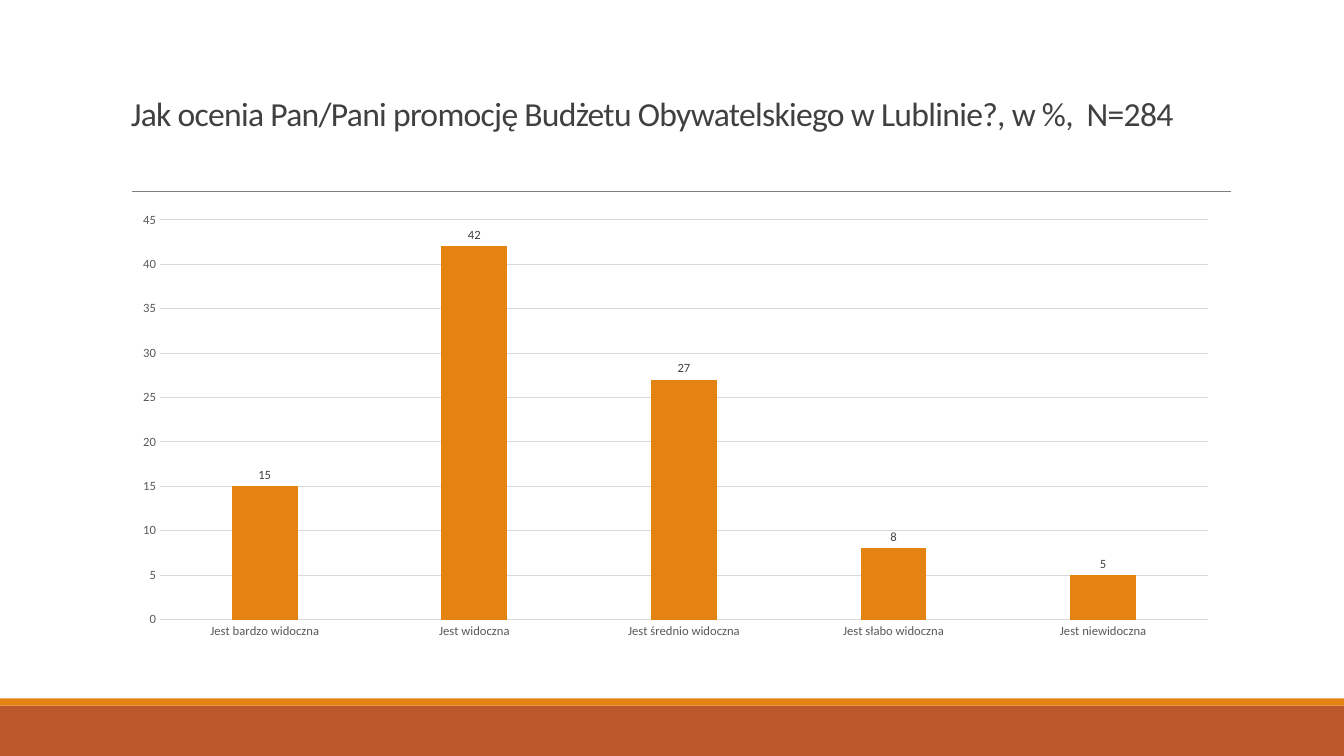
"""Builds a slide with a column chart on how visible the civic budget promotion is."""
from lxml import etree
from pptx import Presentation
from pptx import util as u
from pptx.chart import data as chart_data
from pptx.dml import color
from pptx.enum import chart as chart_enum
from pptx.enum import shapes, text
from pptx.oxml import ns

COLORS = {
    "rust": "BD582C",
    "orange": "E48312",
    "rule": "808080",
    "title": "404040",
    "axis": "595959",
    "grid": "D9D9D9",
    "black": "000000",
}
RATINGS = {
    "Jest bardzo widoczna": 15,
    "Jest widoczna": 42,
    "Jest średnio widoczna": 27,
    "Jest słabo widoczna": 8,
    "Jest niewidoczna": 5,
}


class SlideBuilder:
    """Holds the style and the current slide."""

    def __init__(self, slide, font_name="Calibri"):
        self.slide = slide
        self.font_name = font_name

    def rgb(self, name):
        return color.RGBColor.from_string(COLORS[name])

    def style_font(self, font, size, color_name):
        font.name = self.font_name
        font.size = u.Pt(size)
        font.bold = False
        font.color.rgb = self.rgb(color_name)

    def style_line(self, line, color_name, width):
        line.color.rgb = self.rgb(color_name)
        line.width = u.Pt(width)

    def band(self, left, top, width, height, color_name):
        shape = self.slide.shapes.add_shape(
            shapes.MSO_SHAPE.RECTANGLE, *map(u.Inches, (left, top, width, height)))
        shape.shadow.inherit = False
        shape.fill.solid()
        shape.fill.fore_color.rgb = self.rgb(color_name)
        shape.line.fill.background()

    def rule(self, left, right, top, color_name, width):
        connector = self.slide.shapes.add_connector(
            shapes.MSO_CONNECTOR.STRAIGHT, *map(u.Inches, (left, top, right, top)))
        self.style_line(connector.line, color_name, width)
        etree.SubElement(connector._element.spPr, ns.qn("a:effectLst"))

    def title(self, left, top, width, height, words):
        box = self.slide.shapes.add_textbox(*map(u.Inches, (left, top, width, height)))
        frame = box.text_frame
        frame.word_wrap = True
        frame.vertical_anchor = text.MSO_ANCHOR.BOTTOM
        paragraph = frame.paragraphs[0]
        paragraph.line_spacing = 0.85
        run = paragraph.add_run()
        run.text = words
        self.style_font(run.font, 24, "title")
        run._r.get_or_add_rPr().set("spc", "-50")

    def column_chart(self, left, top, width, height, values):
        data = chart_data.CategoryChartData(number_format="General")
        data.categories = list(values)
        data.add_series("Series 1", list(values.values()))
        chart = self.slide.shapes.add_chart(
            chart_enum.XL_CHART_TYPE.COLUMN_CLUSTERED,
            *map(u.Inches, (left, top, width, height)), data).chart
        chart.has_title = False
        chart.has_legend = False
        self.style_font(chart.font, 10, "black")

        for axis in (chart.category_axis, chart.value_axis):
            axis.major_tick_mark = chart_enum.XL_TICK_MARK.NONE
            axis.minor_tick_mark = chart_enum.XL_TICK_MARK.NONE
            self.style_font(axis.tick_labels.font, 9, "axis")
        self.style_line(chart.category_axis.format.line, "grid", 0.75)
        value_axis = chart.value_axis
        value_axis.format.line.fill.background()
        value_axis.minimum_scale = 0
        value_axis.maximum_scale = 45
        value_axis.major_unit = 5
        self.style_line(value_axis.major_gridlines.format.line, "grid", 0.75)

        plot = chart.plots[0]
        plot.vary_by_categories = False
        plot.gap_width = 219
        plot.overlap = -27
        series = plot.series[0]
        series.invert_if_negative = False
        series.format.fill.solid()
        series.format.fill.fore_color.rgb = self.rgb("orange")
        labels = series.data_labels
        labels.show_value = True
        labels.position = chart_enum.XL_LABEL_POSITION.OUTSIDE_END
        self.style_font(labels.font, 9, "title")


def main():
    presentation = Presentation()
    presentation.slide_width = u.Inches(13.33)
    presentation.slide_height = u.Inches(7.5)
    builder = SlideBuilder(presentation.slides.add_slide(presentation.slide_layouts[6]))
    builder.band(0, 7, 13.33, 0.5, "rust")
    builder.band(0, 6.93, 13.33, 0.07, "orange")
    builder.rule(1.31, 12.21, 1.9, "rule", 0.5)
    builder.title(1.2, 0.39, 11, 0.98,
                  "Jak ocenia Pan/Pani promocję Budżetu Obywatelskiego w Lublinie?, w %,  N=284")
    builder.column_chart(1.2, 2.02, 11, 4.4, RATINGS)
    presentation.save("out.pptx")


if __name__ == "__main__":
    main()
